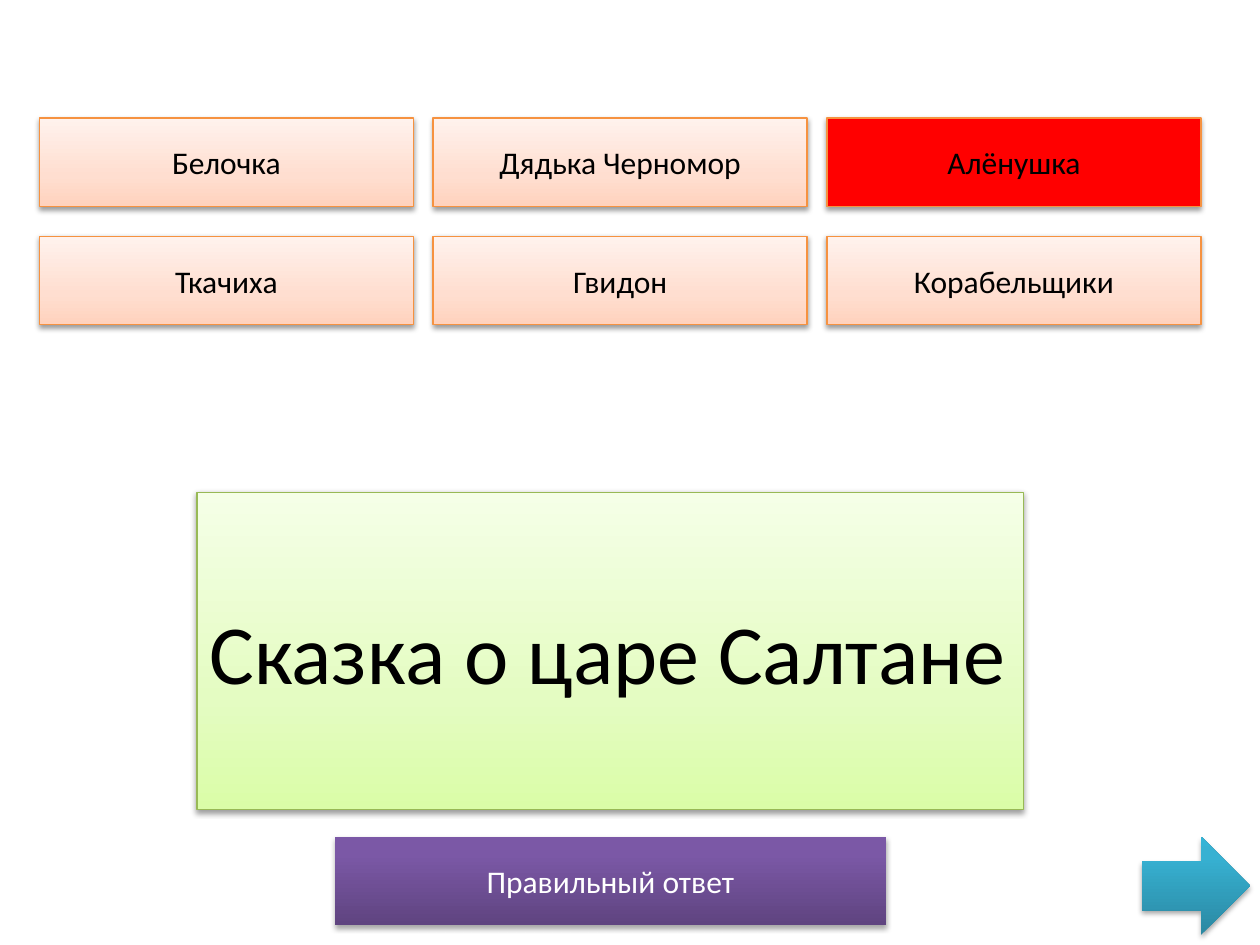
from dataclasses import dataclass

from lxml import etree
from pptx import Presentation
from pptx import util as u
from pptx.dml.color import RGBColor
from pptx.enum import shapes, text
from pptx.oxml import ns

GRID = 32
ANSWERS = (
    ("Белочка", "Дядька Черномор", "Алёнушка"),
    ("Ткачиха", "Гвидон", "Корабельщики"),
)
ODD_ONE = "Алёнушка"


@dataclass(frozen=True)
class Style:
    stops: tuple[tuple[int, str], ...]
    line: str | None
    shadow_alpha: int
    shadow_dist: float
    ink: str


@dataclass(frozen=True)
class Theme:
    font: str = "Calibri"
    label_size: int = 18
    answer_size: int = 48
    line_width: float = 0.75
    shadow_blur: float = 3.1
    shadow_ink: str = "000000"
    option: Style = Style(
        ((0, "FFD2BD"), (35, "FFDED0"), (100, "FFF2ED")), "F69240", 38, 1.6, "000000")
    wrong: Style = Style(((0, "FF0000"),), "F69240", 38, 1.6, "000000")
    tale: Style = Style(
        ((0, "DAFDA7"), (35, "E4FCC2"), (100, "F5FFE7")), "98B955", 38, 1.6, "000000")
    button: Style = Style(
        ((0, "5F4480"), (80, "7B58A6"), (100, "7C57A8")), None, 35, 1.8, "FFFFFF")
    arrow: Style = Style(
        ((0, "2A88A2"), (80, "37B1D2"), (100, "34B4D6")), None, 35, 1.8, "FFFFFF")


@dataclass(frozen=True)
class Block:
    col: float
    row: float
    cols: float
    rows: float
    style: Style
    label: str = ""
    size: int = 18
    align: text.PP_ALIGN = text.PP_ALIGN.CENTER
    kind: shapes.MSO_SHAPE = shapes.MSO_SHAPE.RECTANGLE


THEME = Theme()


def add_color(parent, color: str):
    return etree.SubElement(parent, ns.qn("a:srgbClr"), val=color)


def paint(sp, style: Style) -> None:
    if len(style.stops) == 1:
        sp.fill.solid()
        sp.fill.fore_color.rgb = RGBColor.from_string(style.stops[0][1])
    else:
        sp.fill.gradient()
        sp.fill.gradient_angle = 90
        stops = sp._element.spPr.find(".//" + ns.qn("a:gsLst"))
        for old in list(stops):
            stops.remove(old)
        for pos, color in style.stops:
            add_color(etree.SubElement(stops, ns.qn("a:gs"), pos=str(pos * 1000)), color)
    if style.line:
        sp.line.color.rgb = RGBColor.from_string(style.line)
        sp.line.width = u.Pt(THEME.line_width)
    else:
        sp.line.fill.background()


def add_shadow(sp, style: Style) -> None:
    sp.shadow.inherit = False
    effects = sp._element.spPr.find(ns.qn("a:effectLst"))
    shadow = etree.SubElement(
        effects, ns.qn("a:outerShdw"), blurRad=str(u.Pt(THEME.shadow_blur)),
        dist=str(u.Pt(style.shadow_dist)), dir="5400000", rotWithShape="0")
    color = add_color(shadow, THEME.shadow_ink)
    etree.SubElement(color, ns.qn("a:alpha"), val=str(style.shadow_alpha * 1000))


def write_label(sp, block: Block) -> None:
    tf = sp.text_frame
    tf.word_wrap = True
    tf.vertical_anchor = text.MSO_ANCHOR.MIDDLE
    tf.text = block.label
    p = tf.paragraphs[0]
    p.alignment = block.align
    r = p.runs[0]
    r.font.name = THEME.font
    r.font.size = u.Pt(block.size)
    r.font.color.rgb = RGBColor.from_string(block.style.ink)


def draw_block(prs, s, block: Block) -> None:
    dx, dy = prs.slide_width / GRID, prs.slide_height / GRID
    sp = s.shapes.add_shape(
        block.kind, round(block.col * dx), round(block.row * dy),
        round(block.cols * dx), round(block.rows * dy))
    paint(sp, block.style)
    add_shadow(sp, block.style)
    if block.label:
        write_label(sp, block)


def main() -> None:
    prs = Presentation()
    prs.slide_width, prs.slide_height = u.Inches(10), u.Inches(7.5)
    s = prs.slides.add_slide(prs.slide_layouts[6])
    options = [
        Block(1 + 10 * col, 4 + 4 * row, 9.5, 3,
              THEME.wrong if name == ODD_ONE else THEME.option, name, THEME.label_size)
        for row, names in enumerate(ANSWERS)
        for col, name in enumerate(names)
    ]
    others = [
        Block(8.5, 28.33, 14, 3, THEME.button, "Правильный ответ", THEME.label_size),
        Block(29, 28.33, 2.75, 3.33, THEME.arrow, kind=shapes.MSO_SHAPE.RIGHT_ARROW),
        Block(5, 16.67, 21, 10.75, THEME.tale, "Сказка о царе Салтане",
              THEME.answer_size, text.PP_ALIGN.LEFT),
    ]
    for block in options + others:
        draw_block(prs, s, block)
    prs.save("out.pptx")


if __name__ == "__main__":
    main()
